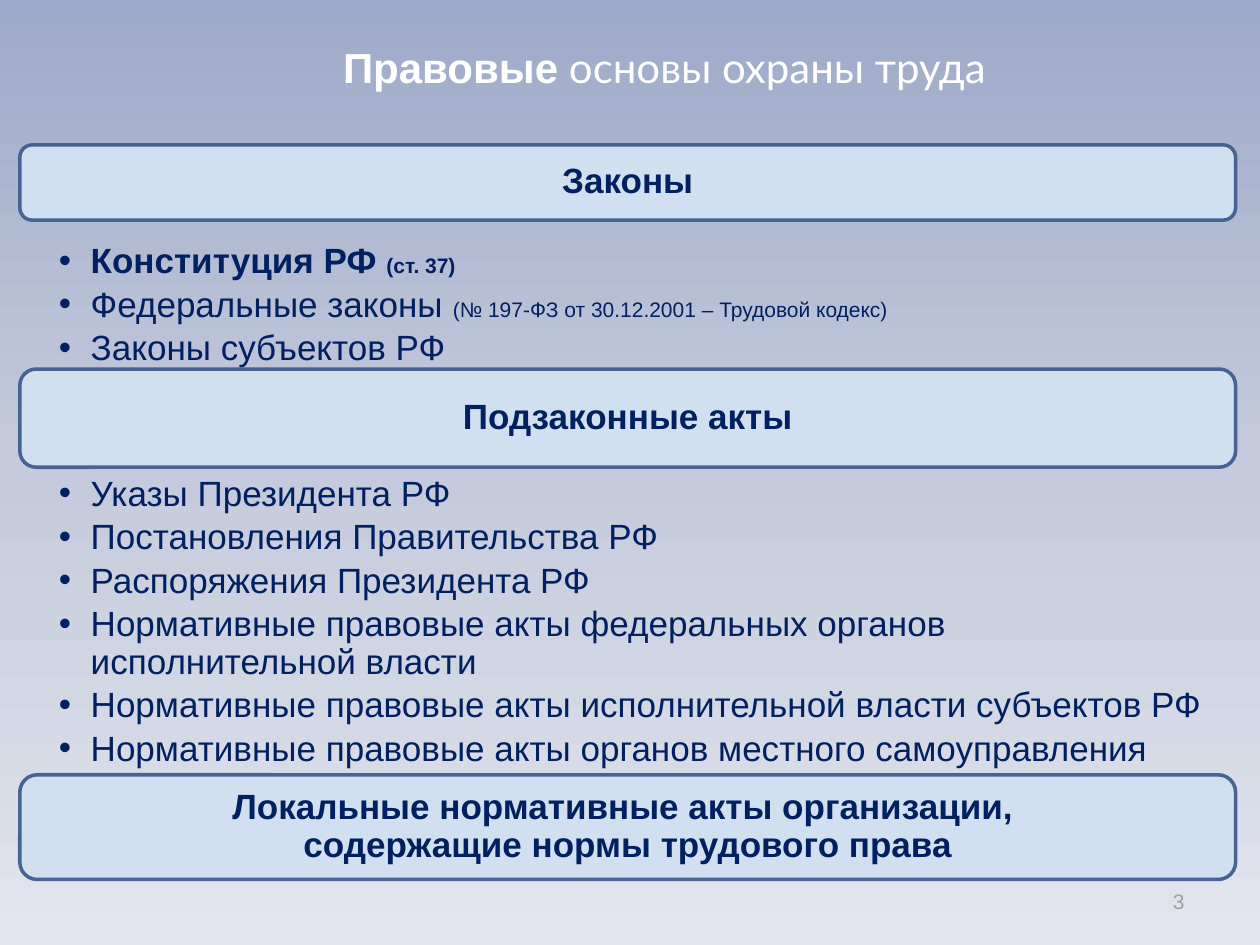
import copy
import pptx
import pptx.dml.color
import pptx.enum.shapes
import pptx.enum.text
import pptx.oxml
import pptx.oxml.ns
import pptx.util

Cm, Pt = pptx.util.Cm, pptx.util.Pt
ALIGN = pptx.enum.text.PP_ALIGN
ANCHOR = pptx.enum.text.MSO_ANCHOR

HUES = {"navy": "002060", "pale": "D1E0F0", "edge": "476394",
        "white": "FFFFFF", "grey": "A0A0A0"}
SKY = [(0, "9EAAC9"), (0.5, "C5CBDC"), (1, "E2E5ED")]

TITLE = [("Правовые", 24, True, "Arial"),
         (" основы охраны труда", 24, False, "Lato")]
PAGE = [("3", 12, False, "Arial")]

BARS = [
    (2.92, 1.52, ["Законы"]),
    (7.44, 1.98, ["Подзаконные акты"]),
    (15.62, 2.11, ["Локальные нормативные акты организации, ",
                   "содержащие нормы трудового права"]),
]
LISTS = [
    (4.83, 2.69, 0.08, 0.41, [
        [("Конституция РФ ", 20, True), ("(ст. 37)", 12, True)],
        [("Федеральные законы ", 20, False),
         ("(№ 197-ФЗ от 30.12.2001 – Трудовой кодекс)", 12, False)],
        [("Законы субъектов РФ", 20, False)],
    ]),
    (9.5, 6.12, 0.1, 0.51, [[(line, 20, False)] for line in (
        "Указы Президента РФ",
        "Постановления Правительства РФ",
        "Распоряжения Президента РФ",
        "Нормативные правовые акты федеральных органов исполнительной власти",
        "Нормативные правовые акты исполнительной власти субъектов РФ",
        "Нормативные правовые акты органов местного самоуправления",
    )]),
]
LEFT, WIDE = 0.4, 24.51
GAP, DENT = 3.2, 0.64


def rgb(code):
    return pptx.dml.color.RGBColor.from_string(code)


def write(para, text, size, bold, face="Arial", hue="navy"):
    run = para.add_run()
    run.text = text
    font = run.font
    font.size, font.bold, font.name = Pt(size), bold, face
    font.color.rgb = rgb(HUES[hue])


def frame(shape, pads, anchor):
    body = shape.text_frame
    body.word_wrap = True
    body.vertical_anchor = anchor
    body.margin_left, body.margin_top, body.margin_right, body.margin_bottom = map(Cm, pads)
    return body


def box(slide, place, pads=(0.25, 0.13, 0.25, 0.13), anchor=ANCHOR.MIDDLE):
    return frame(slide.shapes.add_textbox(*map(Cm, place)), pads, anchor)


def label(slide, place, runs, align, hue):
    para = box(slide, place).paragraphs[0]
    para.alignment = align
    for run in runs:
        write(para, *run, hue=hue)


def bar(slide, top, high, lines):
    kind = pptx.enum.shapes.MSO_SHAPE.ROUNDED_RECTANGLE
    shape = slide.shapes.add_shape(kind, *map(Cm, (LEFT, top, WIDE, high)))
    shape.shadow.inherit = False
    shape.fill.solid()
    shape.fill.fore_color.rgb = rgb(HUES["pale"])
    shape.line.color.rgb = rgb(HUES["edge"])
    shape.line.width = Pt(2)
    para = frame(shape, [0.2] * 4, ANCHOR.MIDDLE).paragraphs[0]
    para.alignment, para.line_spacing = ALIGN.CENTER, 0.9
    for i, line in enumerate(lines):
        if i:
            para.add_line_break()
        write(para, line, 20, True)


def bullets(slide, top, high, pad, right, items):
    body = box(slide, (LEFT, top, WIDE, high), (0.79, pad, right, pad), ANCHOR.TOP)
    space = pptx.oxml.ns.nsdecls("a")
    for i, runs in enumerate(items):
        para = body.add_paragraph() if i else body.paragraphs[0]
        para.line_spacing, para.space_after = 0.9, Pt(GAP)
        for run in runs:
            write(para, *run)
        props = para._p.get_or_add_pPr()
        props.set("marL", str(Cm(DENT)))
        props.set("indent", str(-Cm(DENT)))
        for mark in ('buFont {} typeface="Arial"', 'buChar {} char="•"'):
            props.append(pptx.oxml.parse_xml(f"<a:{mark.format(space)}/>"))


def paint(slide):
    fill = slide.background.fill
    fill.gradient()
    fill.gradient_angle = 270
    stops = slide.element.xpath(".//a:gsLst")[0]
    stops.append(copy.deepcopy(stops[-1]))
    for stop, (spot, code) in zip(fill.gradient_stops, SKY):
        stop.position = spot
        stop.color.rgb = rgb(code)


def main():
    deck = pptx.Presentation()
    deck.slide_width, deck.slide_height = Cm(25.4), Cm(19.05)
    slide = deck.slides.add_slide(deck.slide_layouts[6])
    paint(slide)
    label(slide, (2.69, 0.53, 21.41, 1.63), TITLE, ALIGN.CENTER, "white")
    for group in BARS:
        bar(slide, *group)
    for group in LISTS:
        bullets(slide, *group)
    label(slide, (18.21, 17.65, 5.92, 1.02), PAGE, ALIGN.RIGHT, "grey")
    deck.save("out.pptx")


if __name__ == "__main__":
    main()
